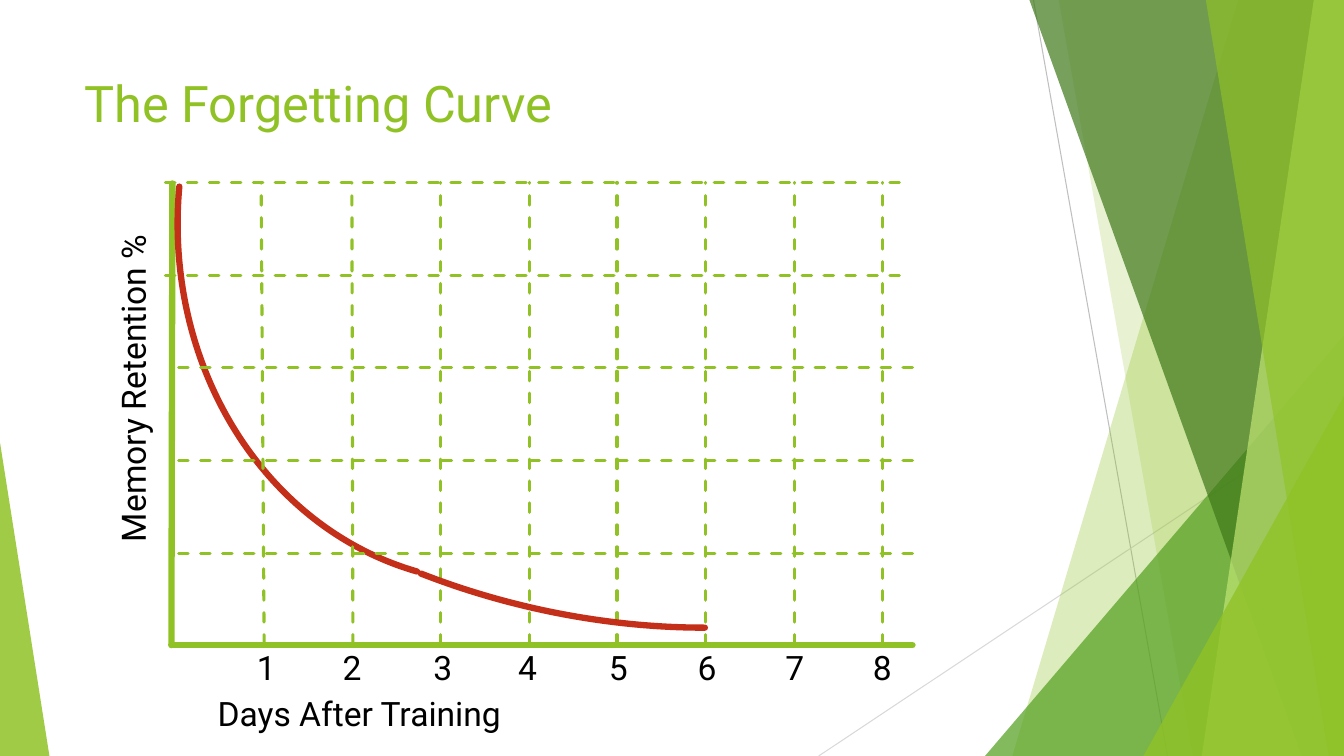
from dataclasses import dataclass

from lxml.etree import SubElement
from pptx import Presentation
from pptx.dml.color import RGBColor
from pptx.enum.dml import MSO_LINE_DASH_STYLE as Dash
from pptx.enum.shapes import MSO_CONNECTOR as Connector, MSO_SHAPE as Shape
from pptx.enum.text import MSO_ANCHOR as Anchor
from pptx.oxml.ns import qn
from pptx.util import Pt

PX = 9144  # EMU in one px, 100 px to the inch


@dataclass(frozen=True)
class Theme:
    font: str = "Roboto"
    lime: str = "90C226"
    leaf: str = "54A021"
    forest: str = "3F7819"
    pale: str = "C0E474"
    red: str = "C42F1A"
    black: str = "000000"
    gray: str = "BFBFBF"
    light_gray: str = "D9D9D9"
    title_size: int = 36
    label_size: int = 24
    hairline: float = 0.75
    grid_line: float = 2.25
    heavy_line: float = 4.5


THEME = Theme()


@dataclass(frozen=True)
class Box:
    left: int
    top: int
    width: int
    height: int

    def emu(self):
        return [value * PX for value in (self.left, self.top, self.width, self.height)]


def add_text(slide, box, text, size, color, rotation=0):
    shape = slide.shapes.add_textbox(*box.emu())
    shape.rotation = rotation
    frame = shape.text_frame
    frame.word_wrap = True
    frame.vertical_anchor = Anchor.TOP
    run = frame.paragraphs[0].add_run()
    run.text = text
    font_format = {"name": THEME.font, "size": Pt(size)}
    for name, value in font_format.items():
        setattr(run.font, name, value)
    run.font.color.rgb = RGBColor.from_string(color)


def style_line(line, color, width, dash=None):
    line.color.rgb = RGBColor.from_string(color)
    line_format = {"width": Pt(width), "dash_style": dash}
    for name, value in line_format.items():
        setattr(line, name, value)


def round_ends(shape):
    shape.line._get_or_add_ln().set("cap", "rnd")


def add_line(slide, start, end, color, width, dash=None):
    points = [value * PX for value in (*start, *end)]
    connector = slide.shapes.add_connector(Connector.STRAIGHT, *points)
    style_line(connector.line, color, width, dash)
    SubElement(connector._element.spPr, qn("a:effectLst"))
    return connector


def fill_facet(shape, color, opacity):
    """Fill a borderless shape, with opacity in percent."""
    shape.shadow.inherit = False
    shape.line.fill.background()
    shape.fill.solid()
    shape.fill.fore_color.rgb = RGBColor.from_string(color)
    color_element = shape._element.spPr.find(qn("a:solidFill"))[0]
    SubElement(color_element, qn("a:alpha")).set("val", str(opacity * 1000))


def add_triangle(slide, box, apex, color, opacity):
    shape = slide.shapes.add_shape(Shape.ISOSCELES_TRIANGLE, *box.emu())
    shape.adjustments[0] = apex
    fill_facet(shape, color, opacity)


def add_band(slide, box, top_left, bottom_left, color, opacity):
    """Band from a slanted left edge to the right side of the box."""
    right, bottom = box.left + box.width, box.top + box.height
    builder = slide.shapes.build_freeform(box.left + top_left, box.top, scale=PX)
    builder.add_line_segments(
        [(right, box.top), (right, bottom), (box.left + bottom_left, bottom)])
    fill_facet(builder.convert_to_shape(), color, opacity)


def add_corner_triangle(slide, box, width, height, color, opacity):
    corner = Box(box.left + box.width - width, box.top + box.height - height, width, height)
    add_triangle(slide, corner, 1, color, opacity)


def add_facets(slide, box):
    left, top = box.left, box.top
    right, bottom = left + box.width, top + box.height
    add_line(slide, (left + 213, top), (left + 346, bottom), THEME.gray, THEME.hairline)
    add_line(slide, (right, top + 403), (left, bottom), THEME.light_gray, THEME.hairline)
    add_band(slide, box, 416, 192, THEME.lime, 30)
    add_band(slide, box, 238, 371, THEME.lime, 20)
    add_corner_triangle(slide, box, 356, 417, THEME.leaf, 72)
    add_band(slide, box, 209, 479, THEME.forest, 70)
    add_band(slide, box, 491, 380, THEME.pale, 70)
    add_band(slide, box, 384, 506, THEME.lime, 65)
    add_corner_triangle(slide, box, 199, 357, THEME.lime, 80)


def add_arc(slide, box, rotation, angles):
    """Mirrored arc; angles are adjust values of 1/0.6 degree."""
    shape = slide.shapes.add_shape(Shape.ARC, *box.emu())
    shape.shadow.inherit = False
    shape.fill.background()
    style_line(shape.line, THEME.red, THEME.heavy_line)
    round_ends(shape)
    shape.rotation = rotation
    for index, angle in enumerate(angles):
        shape.adjustments[index] = angle
    shape._element.spPr.find(qn("a:xfrm")).set("flipH", "1")


def add_axes(slide, box):
    origin = (box.left, box.top + box.height)
    for start, end in (((box.left + 1, box.top + 1), origin),
                       ((box.left + box.width, origin[1]), origin)):
        round_ends(add_line(slide, start, end, THEME.lime, THEME.heavy_line))


def day_left(box, day):
    return round(box.left + 92 + 87.6 * (day - 1))


def add_grid(slide, box):
    lines = []
    for row in range(5):
        shift = 13 if row < 2 else 0
        y = box.top + 92 * row
        left = box.left - shift
        lines.append(((left + box.width, y), (left, y)))
    leans = {1: 3, 2: 1}
    for day in range(1, 9):
        x = day_left(box, day)
        lines.append(((x, box.top + box.height - 1), (x - leans.get(day, 0), box.top)))
    for start, end in lines:
        round_ends(add_line(slide, start, end, THEME.lime, THEME.grid_line, Dash.DASH))


def add_labels(slide, box):
    bottom = box.top + box.height
    size, color = THEME.label_size, THEME.black
    add_text(slide, Box(box.left - 207, box.top + 173, 337, 50),
             "Memory Retention %", size, color, 270)
    add_text(slide, Box(box.left + 36, bottom + 43, 337, 50),
             "Days After Training", size, color)
    nudges = (17, 20, 17, 21, 18, 18, 19, 19)
    for day, nudge in enumerate(nudges, 1):
        add_text(slide, Box(day_left(box, day) - nudge, bottom - 3, 48, 50),
                 str(day), size, color)


def add_forgetting_chart(slide, box):
    add_axes(slide, box)
    add_labels(slide, box)
    add_arc(slide, Box(box.left - 34, box.top - 290, 728, 647), 275.2, (162, 210.86))
    add_grid(slide, box)
    add_arc(slide, Box(box.left - 82, box.top - 218, 1015, 647), 193.5, (150.75, 180.38))


def main():
    presentation = Presentation()
    presentation.slide_width = 1333 * PX
    presentation.slide_height = 750 * PX
    slide = presentation.slides.add_slide(presentation.slide_layouts[6])
    add_facets(slide, Box(812, 0, 521, 750))
    add_triangle(slide, Box(0, 439, 49, 311), 0, THEME.lime, 85)
    add_text(slide, Box(74, 67, 940, 144), "The Forgetting Curve",
             THEME.title_size, THEME.lime)
    add_forgetting_chart(slide, Box(170, 181, 735, 459))
    presentation.save("out.pptx")


if __name__ == "__main__":
    main()
